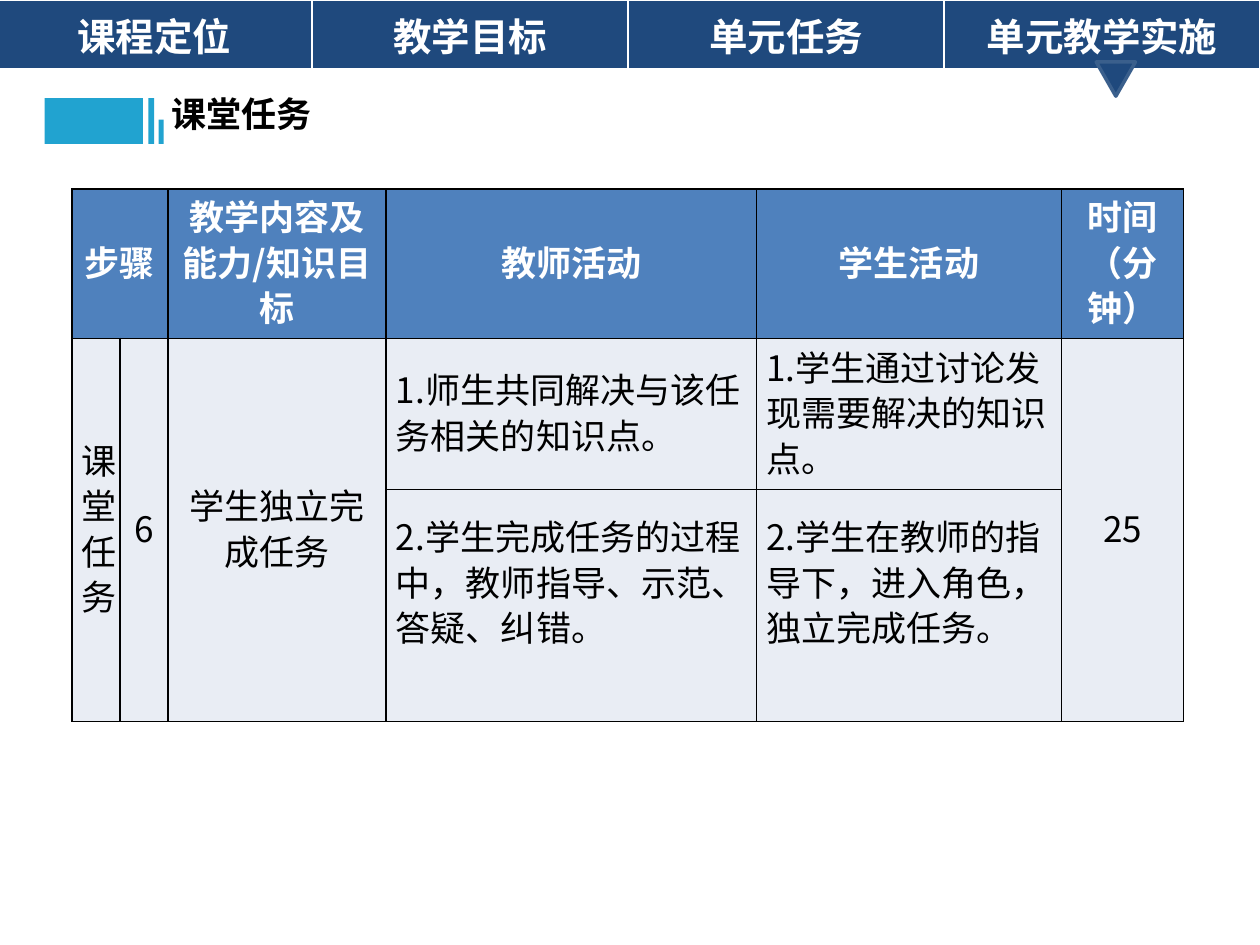
from dataclasses import dataclass

from lxml import etree
from pptx import Presentation
from pptx import util as u
from pptx.dml.color import RGBColor
from pptx.enum import shapes, text
from pptx.oxml import ns


@dataclass(frozen=True)
class Theme:
    navy: str = "1F497D"
    navy_line: str = "3A5F8C"
    header: str = "4F81BD"
    body: str = "E9EDF4"
    accent: str = "21A3D0"
    white: str = "FFFFFF"
    black: str = "000000"
    font: str = "Noto Sans CJK SC"
    nav_font: str = "Times New Roman"
    nav_size: int = 22
    size: int = 20
    line_spacing: int = 26


theme = Theme()


def format_text(frame, size, color, bold, font=theme.font):
    """Style every run, naming the font for Chinese text too."""
    for paragraph in frame.paragraphs:
        for run in paragraph.runs:
            run.font.size = u.Pt(size)
            run.font.bold = bold
            run.font.name = font
            run.font.color.rgb = RGBColor.from_string(color)
            east_asian = etree.SubElement(run.font._element, ns.qn("a:ea"))
            east_asian.set("typeface", theme.font)


def style_cell(cell, fill, margins, border, widths):
    """Fill a cell, set its margins and draw its left, right, top, bottom borders."""
    cell.fill.solid()
    cell.fill.fore_color.rgb = RGBColor.from_string(fill)
    cell.margin_left = cell.margin_right = u.Cm(margins[0])
    cell.margin_top = cell.margin_bottom = u.Cm(margins[1])
    properties = cell._tc.get_or_add_tcPr()
    for index, (side, width) in enumerate(zip("LRTB", widths)):
        line = etree.Element(ns.qn(f"a:ln{side}"), w=str(u.Pt(width)))
        solid = etree.SubElement(line, ns.qn("a:solidFill"))
        etree.SubElement(solid, ns.qn("a:srgbClr"), val=border)
        properties.insert(index, line)


presentation = Presentation()
presentation.slide_width = u.Cm(25.4)
presentation.slide_height = u.Cm(19.05)
slide = presentation.slides.add_slide(presentation.slide_layouts[6])

# Lesson table
column_widths = [0.97, 0.97, 4.39, 7.47, 6.15, 2.46]
row_heights = [2.46, 3.05, 4.67]
lesson_rows = [
    ["步骤", "", "教学内容及能力/知识目标", "教师活动", "学生活动", "时间（分钟）"],
    ["课堂任务", "6", "学生独立完成任务", "1.师生共同解决与该任务相关的知识点。",
     "1.学生通过讨论发现需要解决的知识点。", "25"],
    ["", "", "", "2.学生完成任务的过程中，教师指导、示范、答疑、纠错。",
     "2.学生在教师的指导下，进入角色，独立完成任务。", ""],
]
activity_columns = (3, 4)
# Wider right margins keep closing punctuation inside the cell
right_margins = {(1, 3): 0.3, (2, 3): 0.3, (1, 4): 0.25}
last_row_bottom_margin = 1.02
lesson = slide.shapes.add_table(
    len(row_heights), len(column_widths), u.Cm(1.45), u.Cm(3.81),
    u.Cm(sum(column_widths)), u.Cm(sum(row_heights))).table
lesson.first_row = lesson.horz_banding = False
for column, width in zip(lesson.columns, column_widths):
    column.width = u.Cm(width)
for row, height in zip(lesson.rows, row_heights):
    row.height = u.Cm(height)

lesson.cell(0, 0).merge(lesson.cell(0, 1))
for column_index in range(len(column_widths)):
    if column_index not in activity_columns:
        lesson.cell(1, column_index).merge(lesson.cell(2, column_index))

for row_index, row_texts in enumerate(lesson_rows):
    is_header = row_index == 0
    for column_index, wording in enumerate(row_texts):
        cell = lesson.cell(row_index, column_index)
        style_cell(cell, theme.header if is_header else theme.body,
                   (0.2, 0.13), theme.black, (1, 1, 1, 1))
        if not wording:
            continue
        cell.margin_right = u.Cm(right_margins.get((row_index, column_index), 0.2))
        if row_index == 2:
            cell.margin_bottom = u.Cm(last_row_bottom_margin)
        cell.vertical_anchor = text.MSO_ANCHOR.MIDDLE
        cell.text_frame.text = wording
        paragraph = cell.text_frame.paragraphs[0]
        paragraph.line_spacing = u.Pt(theme.line_spacing)
        centred = is_header or column_index not in activity_columns
        paragraph.alignment = text.PP_ALIGN.CENTER if centred else text.PP_ALIGN.LEFT
        format_text(cell.text_frame, theme.size,
                    theme.white if is_header else theme.black, is_header)

# Navigation bar
sections = ["课程定位", "教学目标", "单元任务", "单元教学实施"]
navigation = slide.shapes.add_table(
    1, len(sections), u.Cm(-0.08), u.Cm(0), u.Cm(25.48), u.Cm(1.25)).table
navigation.first_row = navigation.horz_banding = False
for cell, section in zip(navigation.rows[0].cells, sections):
    style_cell(cell, theme.navy, (0.25, 0.15), theme.white, (1, 1, 1, 3))
    cell.text_frame.text = section
    cell.text_frame.paragraphs[0].alignment = text.PP_ALIGN.CENTER
    format_text(cell.text_frame, theme.nav_size, theme.white, True, theme.nav_font)

# Marker under the current section
marker = slide.shapes.add_shape(
    shapes.MSO_SHAPE.FLOWCHART_MERGE, u.Cm(22.1), u.Cm(1.25), u.Cm(0.79), u.Cm(0.69))
marker.shadow.inherit = False
marker.fill.solid()
marker.fill.fore_color.rgb = RGBColor.from_string(theme.navy)
marker.line.color.rgb = RGBColor.from_string(theme.navy_line)
marker.line.width = u.Pt(2)

# Heading with accent bars
heading = slide.shapes.add_group_shape()
for left, top, width, height in [
    (0.9, 1.98, 1.98, 0.92),
    (2.99, 1.98, 0.12, 0.92),
    (3.2, 2.41, 0.1, 0.49),
]:
    bar = heading.shapes.add_shape(
        shapes.MSO_SHAPE.RECTANGLE, u.Cm(left), u.Cm(top), u.Cm(width), u.Cm(height))
    bar.shadow.inherit = False
    bar.fill.solid()
    bar.fill.fore_color.rgb = RGBColor.from_string(theme.accent)
    bar.line.fill.background()

title = heading.shapes.add_textbox(u.Cm(3.2), u.Cm(1.75), u.Cm(3.91), u.Cm(1.11))
title.text_frame.word_wrap = True
title.text_frame.auto_size = text.MSO_AUTO_SIZE.SHAPE_TO_FIT_TEXT
title.text_frame.text = "课堂任务"
format_text(title.text_frame, theme.size, theme.black, True)

presentation.save("out.pptx")
